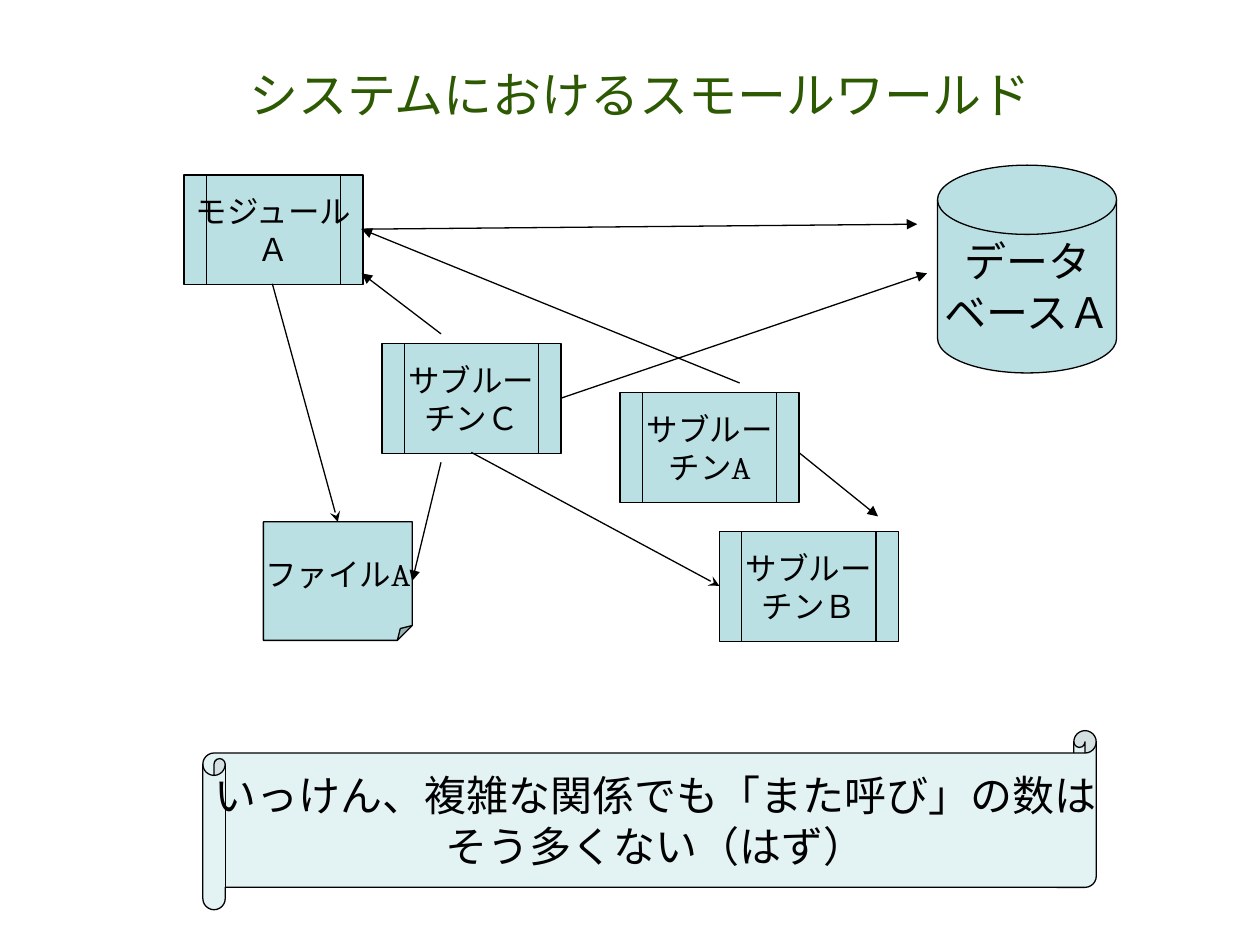
"""Build a slide showing the small-world relations between system parts."""
from dataclasses import dataclass

import lxml.etree
import pptx
import pptx.dml.color
import pptx.enum.shapes
import pptx.enum.text
import pptx.oxml.ns
import pptx.util

Cm = pptx.util.Cm
Kind = pptx.enum.shapes.MSO_SHAPE
qn = pptx.oxml.ns.qn


@dataclass(frozen=True)
class Theme:
    ink: str = "000000"
    title: str = "2D5902"
    fill: str = "BBE0E3"
    title_font: str = "Arial"
    body_font: str = "Cambria"
    title_size: int = 28
    large: int = 24
    small: int = 18
    line_width: float = 0.75


THEME = Theme()


@dataclass(frozen=True)
class Node:
    kind: Kind
    left: float
    top: float
    lines: tuple[str, ...]
    width: float = 3.61
    height: float = 2.21
    size: int = THEME.small
    opacity: int = 100


@dataclass(frozen=True)
class Arrow:
    start: tuple[float, float]
    end: tuple[float, float]
    head: str = "triangle"


PROCESS = Kind.FLOWCHART_PREDEFINED_PROCESS
NODES = (
    Node(PROCESS, 12.5, 7.92, ("サブルー", "チンA")),
    Node(PROCESS, 3.71, 3.53, ("モジュール", "Ａ")),
    Node(Kind.FOLDED_CORNER, 5.31, 10.52, ("ファイルA",), 3, 2.39),
    Node(Kind.FLOWCHART_MAGNETIC_DISK, 18.9, 3.33, ("データ", "ベースＡ"),
         height=4.19, size=THEME.large),
    Node(PROCESS, 14.5, 10.72, ("サブルー", "チンＢ")),
    Node(PROCESS, 7.7, 6.93, ("サブルー", "チンＣ")),
)
CONCLUSION = Node(
    Kind.HORIZONTAL_SCROLL, 4.09, 14.73,
    ("いっけん、複雑な関係でも「また呼び」の数は", "そう多くない（はず）"),
    18.01, 3.61, THEME.large, 40)
MODULE_RIGHT = (7.29, 4.62)
ARROWS = (
    Arrow((8.89, 6.73), (7.29, 5.51)),
    Arrow((5.49, 5.72), (6.81, 10.52), "stealth"),
    Arrow((11.3, 8.03), (18.69, 5.51)),
    Arrow((14.91, 7.72), MODULE_RIGHT),
    Arrow((16.1, 9.12), (17.7, 10.41)),
    Arrow((9.5, 9.12), (14.5, 11.81), "stealth"),
    Arrow(MODULE_RIGHT, (18.49, 4.52)),
    Arrow((8.89, 9.32), (8.31, 11.71)),
)


def rgb(value: str) -> pptx.dml.color.RGBColor:
    return pptx.dml.color.RGBColor.from_string(value)


def write_lines(box, lines: tuple[str, ...], size: int, font: str,
                color: str, wrap: bool) -> None:
    frame = box.text_frame
    frame.word_wrap = wrap
    frame.vertical_anchor = pptx.enum.text.MSO_ANCHOR.MIDDLE
    for index, line in enumerate(lines):
        para = frame.add_paragraph() if index else frame.paragraphs[0]
        para.alignment = pptx.enum.text.PP_ALIGN.CENTER
        span = para.add_run()
        span.text = line
        span.font.size = pptx.util.Pt(size)
        span.font.name = font
        span.font.color.rgb = rgb(color)


def set_line(line) -> None:
    line.color.rgb = rgb(THEME.ink)
    line.width = pptx.util.Pt(THEME.line_width)


def draw_title(page, text: str) -> None:
    box = page.shapes.add_textbox(Cm(2.11), Cm(0.91), Cm(21.59), Cm(1.98))
    write_lines(box, (text,), THEME.title_size, THEME.title_font,
                THEME.title, True)


def set_corner(box, ratio: float) -> None:
    guides = box._element.spPr.find(qn("a:prstGeom")).find(qn("a:avLst"))
    for guide in list(guides):
        guides.remove(guide)
    lxml.etree.SubElement(guides, qn("a:gd"), name="adj",
                          fmla=f"val {round(ratio * 100000)}")


def draw_node(page, node: Node) -> None:
    box = page.shapes.add_shape(node.kind, Cm(node.left), Cm(node.top),
                                Cm(node.width), Cm(node.height))
    box.shadow.inherit = False
    if node.kind == Kind.FOLDED_CORNER:
        set_corner(box, 0.125)
    box.fill.solid()
    box.fill.fore_color.rgb = rgb(THEME.fill)
    if node.opacity < 100:
        color = box._element.spPr.find(qn("a:solidFill"))[0]
        lxml.etree.SubElement(color, qn("a:alpha"), val=str(node.opacity * 1000))
    set_line(box.line)
    write_lines(box, node.lines, node.size, THEME.body_font, THEME.ink, False)


def draw_arrow(page, arrow: Arrow) -> None:
    points = [Cm(value) for value in arrow.start + arrow.end]
    connector = page.shapes.add_connector(
        pptx.enum.shapes.MSO_CONNECTOR.STRAIGHT, *points)
    set_line(connector.line)
    properties = connector._element.spPr
    lxml.etree.SubElement(properties.find(qn("a:ln")), qn("a:tailEnd"),
                          type=arrow.head)
    lxml.etree.SubElement(properties, qn("a:effectLst"))


def main() -> None:
    deck = pptx.Presentation()
    deck.slide_width, deck.slide_height = Cm(25.4), Cm(19.05)
    page = deck.slides.add_slide(deck.slide_layouts[6])
    draw_title(page, "システムにおけるスモールワールド")
    for node in NODES:
        draw_node(page, node)
    for arrow in ARROWS:
        draw_arrow(page, arrow)
    draw_node(page, CONCLUSION)
    deck.save("out.pptx")


if __name__ == "__main__":
    main()
